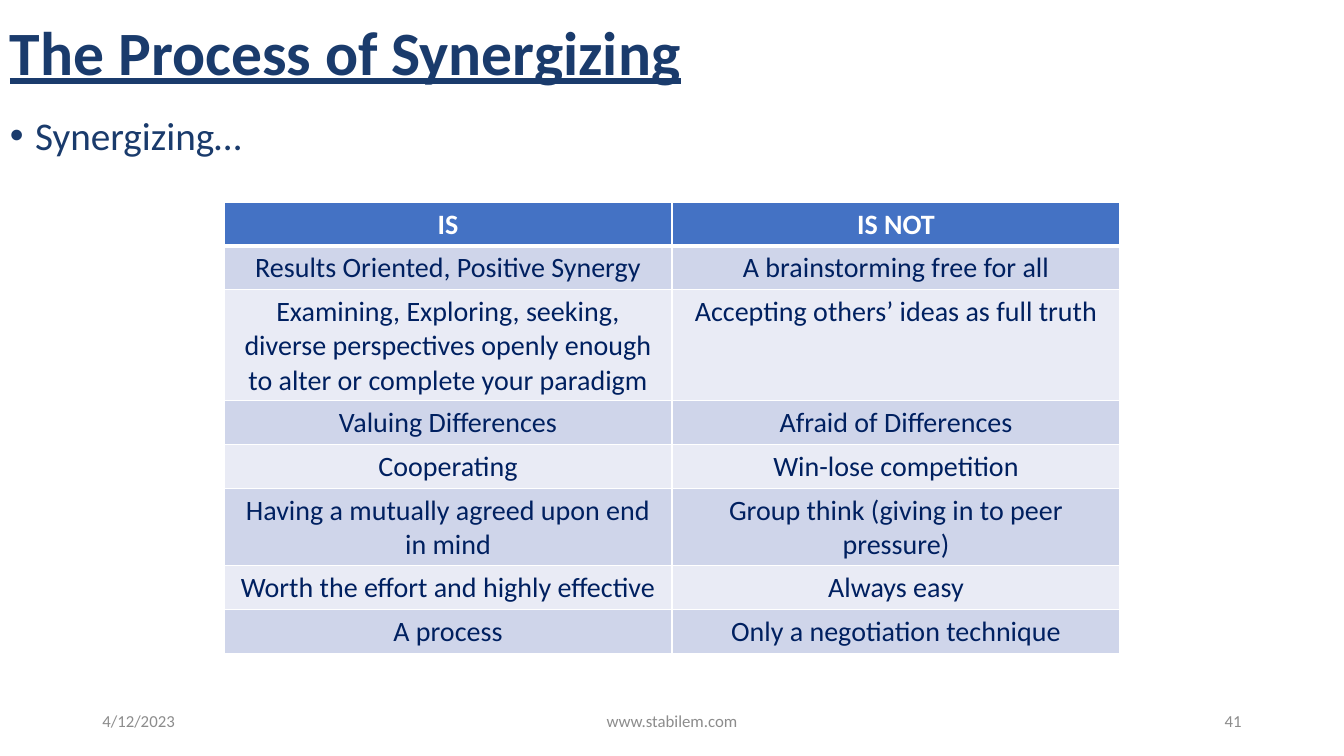
from dataclasses import dataclass
from lxml.etree import SubElement
from pptx import Presentation
from pptx.dml.color import RGBColor as Color
from pptx.enum.text import MSO_ANCHOR as Anchor, PP_ALIGN as Align
from pptx.oxml.ns import qn
from pptx.util import Inches, Pt


@dataclass(frozen=True)
class Theme:
    font: str = "Calibri"
    heading: str = "1A3B6C"
    cell_text: str = "002060"
    footer: str = "8C8C8C"
    white: str = "FFFFFF"
    header_fill: str = "4472C4"
    bands: tuple = ("CFD5EA", "E9EBF5")
    title_size: int = 44
    body_size: int = 28
    table_size: int = 20
    footer_size: int = 12


class SlideBuilder:
    """Places elements on a grid of 160 columns by 90 rows."""

    def __init__(self, deck, theme):
        self.theme = theme
        self.page = deck.slides.add_slide(deck.slide_layouts[6])
        self.column = deck.slide_width / 160
        self.row = deck.slide_height / 90

    def place(self, left, top, width, height):
        return (round(left * self.column), round(top * self.row),
                round(width * self.column), round(height * self.row))

    def style(self, para, size, color, align=Align.LEFT, **flags):
        para.alignment = align
        for span in para.runs:
            span.font.name = self.theme.font
            span.font.size = Pt(size)
            span.font.color.rgb = Color.from_string(color)
            for name, value in flags.items():
                setattr(span.font, name, value)

    def text(self, area, words, size, color, anchor=Anchor.MIDDLE, **looks):
        box = self.page.shapes.add_textbox(*self.place(*area))
        frame = box.text_frame
        frame.word_wrap = True
        frame.vertical_anchor = anchor
        frame.text = words
        para = frame.paragraphs[0]
        self.style(para, size, color, **looks)
        return para

    def bullet(self, area, words):
        para = self.text(area, words, self.theme.body_size, self.theme.heading, Anchor.TOP)
        para.line_spacing = 0.9
        props = para._p.get_or_add_pPr()
        props.set("marL", str(Inches(0.25)))
        props.set("indent", str(-Inches(0.25)))
        SubElement(props, qn("a:buFont"), typeface="Arial")
        SubElement(props, qn("a:buChar"), char="•")

    def border(self, cell, sides):
        """Draw white cell edges; sides maps L, R, T, B to points."""
        props = cell._tc.get_or_add_tcPr()
        for index, (side, points) in enumerate(sides.items()):
            line = props.makeelement(qn(f"a:ln{side}"), {"w": str(Pt(points))})
            fill = SubElement(line, qn("a:solidFill"))
            SubElement(fill, qn("a:srgbClr"), val=self.theme.white)
            props.insert(index, line)

    def table(self, area, rows, row_height):
        theme = self.theme
        frame = self.page.shapes.add_table(len(rows), len(rows[0]), *self.place(*area))
        height = frame.height
        for r, words in enumerate(rows):
            frame.table.rows[r].height = row_height
            header = r == 0
            fill = theme.header_fill if header else theme.bands[(r - 1) % 2]
            color = theme.white if header else theme.cell_text
            for c, word in enumerate(words):
                cell = frame.table.cell(r, c)
                cell.text_frame.text = word
                self.style(cell.text_frame.paragraphs[0], theme.table_size, color,
                           Align.CENTER, bold=header)
                cell.fill.solid()
                cell.fill.fore_color.rgb = Color.from_string(fill)
                self.border(cell, {"L": 1, "R": 1, "T": 3 if r == 1 else 1,
                                   "B": 3 if header else 1})
        frame.height = height


COMPARISON = [
    ("IS", "IS NOT"),
    ("Results Oriented, Positive Synergy", "A brainstorming free for all"),
    ("Examining, Exploring, seeking, diverse perspectives openly enough "
     "to alter or complete your paradigm", "Accepting others’ ideas as full truth"),
    ("Valuing Differences", "Afraid of Differences"),
    ("Cooperating", "Win-lose competition"),
    ("Having a mutually agreed upon end in mind",
     "Group think (giving in to peer pressure)"),
    ("Worth the effort and highly effective", "Always easy"),
    ("A process", "Only a negotiation technique"),
]

FOOTER = [
    (11, 36, "4/12/2023", Align.LEFT),
    (53, 54, "www.stabilem.com", Align.CENTER),
    (113, 36, "41", Align.RIGHT),
]


def main():
    deck = Presentation()
    deck.slide_width, deck.slide_height = Inches(13.33), Inches(7.5)
    theme = Theme()
    slide = SlideBuilder(deck, theme)

    # Title and lead-in
    title = slide.text((0, 0, 131.6, 13.1), "The Process of Synergizing",
                       theme.title_size, theme.heading, bold=True, underline=True)
    title.line_spacing = 0.9
    slide.bullet((0, 13.3, 160, 70.1), "Synergizing…")

    # Comparison table, two thirds of the slide wide
    slide.table((160 / 6, 24.1, 160 * 2 / 3, 53.6), COMPARISON, Inches(0.41))

    # Footer
    for left, width, words, align in FOOTER:
        slide.text((left, 83.4, width, 4.8), words,
                   theme.footer_size, theme.footer, align=align)

    deck.save("out.pptx")


if __name__ == "__main__":
    main()
